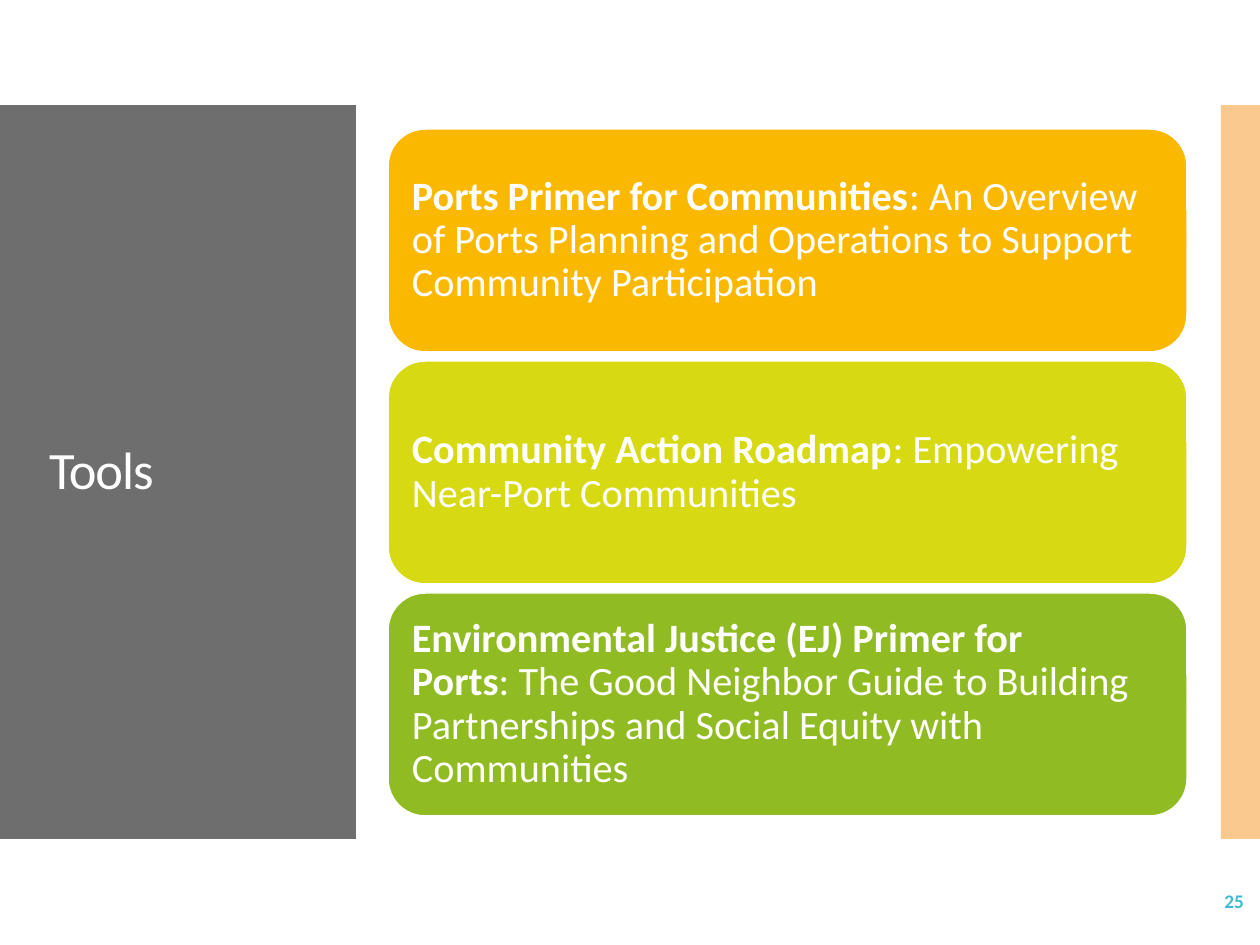
import pptx
import pptx.util
import pptx.dml.color
import pptx.enum.shapes
import pptx.enum.text
import pptx.oxml.ns
from dataclasses import dataclass
from lxml import etree

PX = 914400 / 126
NBSP = chr(160)
SHAPE = pptx.enum.shapes.MSO_SHAPE
ALIGN = pptx.enum.text.PP_ALIGN


@dataclass(frozen=True)
class Theme:
    font: str = "Calibri"
    white: str = "FFFFFF"
    panel: str = "6E6E6E"
    strip: str = "F79421"
    number: str = "40BAD2"
    cards: tuple = ("FAB900", "D7D913", "90BB23")
    title_size: int = 30
    card_size: int = 23
    number_size: int = 11


THEME = Theme()
TOOLS = [
    ("Ports Primer for Communities",
     f":{NBSP}An Overview of Ports Planning and Operations to Support "
     "Community Participation"),
    ("Community Action Roadmap", ": Empowering Near-Port Communities"),
    ("Environmental Justice (EJ) Primer for Ports",
     f":{NBSP}The Good Neighbor Guide to Building Partnerships{NBSP}and "
     "Social Equity with Communities"),
]


def px(n):
    return pptx.util.Emu(round(n * PX))


def rgb(value):
    return pptx.dml.color.RGBColor.from_string(value)


def add_block(s, kind, box, fill, line=None):
    sp = s.shapes.add_shape(kind, *map(px, box))
    sp.shadow.inherit = False
    sp.fill.solid()
    sp.fill.fore_color.rgb = rgb(fill)
    if line:
        sp.line.color.rgb = rgb(line)
        sp.line.width = pptx.util.Pt(0.85)
    else:
        sp.line.fill.background()
    return sp


def write(sp, runs, size, color, align=ALIGN.LEFT, spacing=1.0, inset=13):
    """Fill a shape with one paragraph of (text, bold) runs."""
    tf = sp.text_frame
    frame = {"word_wrap": True, "margin_left": px(inset), "margin_right": px(13),
             "vertical_anchor": pptx.enum.text.MSO_ANCHOR.MIDDLE}
    for name, value in frame.items():
        setattr(tf, name, value)
    p = tf.paragraphs[0]
    p.alignment = align
    p.line_spacing = spacing
    for text, bold in runs:
        r = p.add_run()
        r.text = text
        font = {"name": THEME.font, "size": pptx.util.Pt(size), "bold": bold}
        for name, value in font.items():
            setattr(r.font, name, value)
        r.font.color.rgb = rgb(color)
    return p


def title_panel(s, x, y, w, h):
    add_block(s, SHAPE.RECTANGLE, (x, y, w, h), THEME.panel)
    title = s.shapes.add_textbox(*map(px, (x + 26, y + 50, w - 50, h - 100)))
    p = write(title, [("Tools", False)], THEME.title_size, THEME.white,
              spacing=0.9, inset=23)
    p.runs[0].font._element.set("spc", "-60")  # tightened letters


def accent_strip(s, x, y, w, h):
    sp = add_block(s, SHAPE.RECTANGLE, (x, y, w, h), THEME.strip)
    # Half transparent
    color = sp._element.spPr.find(".//" + pptx.oxml.ns.qn("a:srgbClr"))
    etree.SubElement(color, pptx.oxml.ns.qn("a:alpha"), val="50000")


def tool_cards(s, x, y, w, h, gap=9):
    card_h = (h - gap * (len(TOOLS) - 1)) // len(TOOLS)
    for i, ((name, detail), fill) in enumerate(zip(TOOLS, THEME.cards)):
        box = (x, y + i * (card_h + gap), w, card_h)
        sp = add_block(s, SHAPE.ROUNDED_RECTANGLE, box, fill, THEME.white)
        write(sp, [(name, True), (detail, False)], THEME.card_size,
              THEME.white, spacing=0.9)


def page_number(s, x, y, w, h):
    sp = s.shapes.add_textbox(*map(px, (x, y, w, h)))
    write(sp, [("25", True)], THEME.number_size, THEME.number, ALIGN.RIGHT)


def main():
    prs = pptx.Presentation()
    prs.slide_width, prs.slide_height = px(1260), px(945)
    s = prs.slides.add_slide(prs.slide_layouts[6])
    title_panel(s, 0, 105, 356, 734)
    accent_strip(s, 1221, 105, 39, 734)
    page_number(s, 1099, 876, 158, 50)
    tool_cards(s, 388, 129, 799, 687)
    prs.save("out.pptx")


if __name__ == "__main__":
    main()
